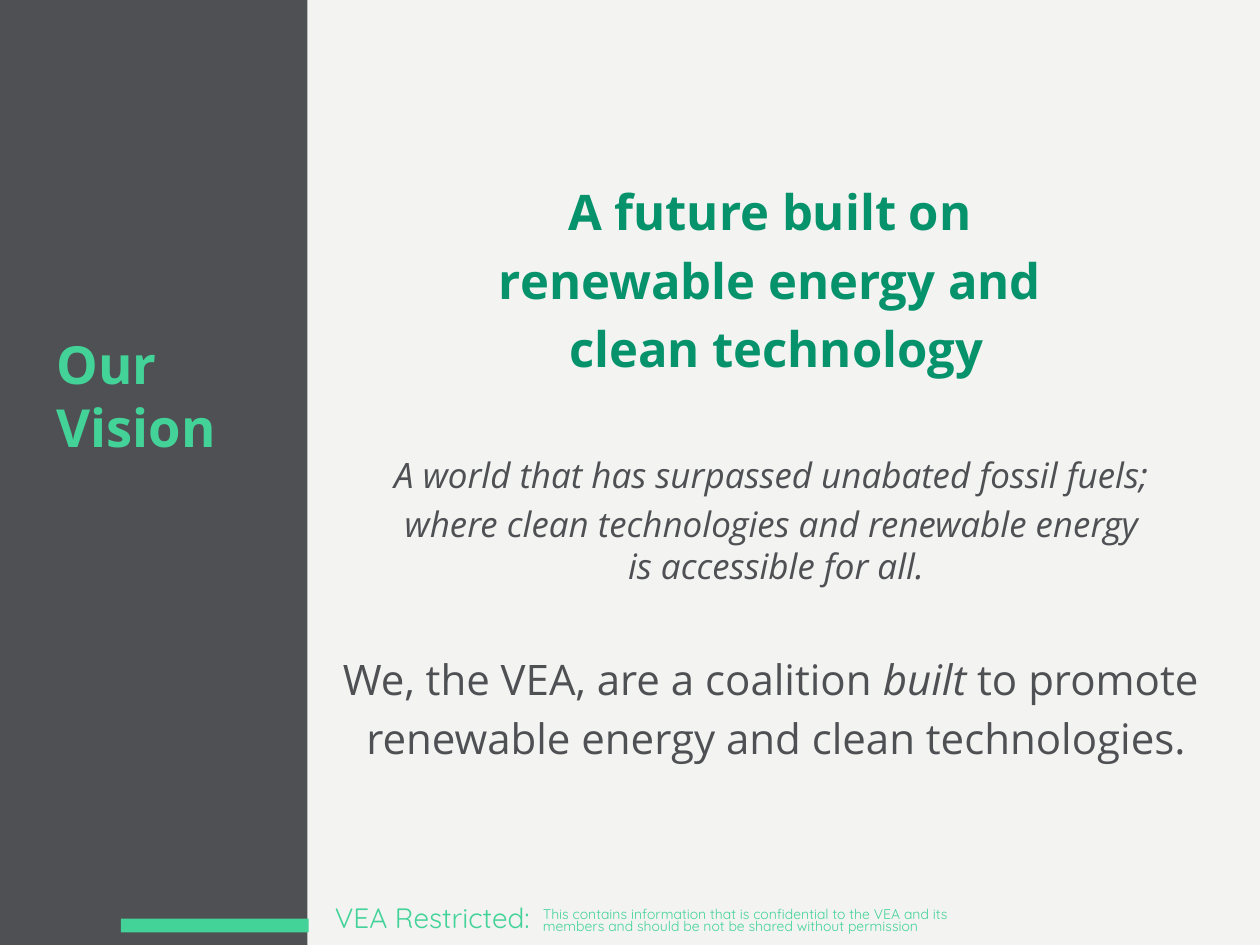
from dataclasses import dataclass

from pptx import Presentation
from pptx.dml.color import RGBColor
from pptx.enum.shapes import MSO_SHAPE
from pptx.enum.text import MSO_ANCHOR, MSO_AUTO_SIZE, PP_ALIGN
from pptx.util import Inches, Pt

COLORS = {"paper": "F3F3F2", "slate": "4E5053", "mint": "43D398", "green": "06926B"}
BODY_FONT, FOOTER_FONT = "Open Sans", "Quicksand"


@dataclass(frozen=True)
class Box:
    left: float
    top: float
    width: float
    height: float

    def lengths(self) -> tuple:
        return tuple(Inches(v) for v in (self.left, self.top, self.width, self.height))


@dataclass(frozen=True)
class Run:
    text: str
    italic: bool = False


@dataclass(frozen=True)
class Style:
    size: float
    color: str
    font: str = BODY_FONT
    bold: bool = False


@dataclass(frozen=True)
class Line:
    runs: tuple[Run, ...]
    style: Style
    before: float = 0
    spacing: float | Pt = 1.0
    align: PP_ALIGN = PP_ALIGN.LEFT


def rgb(name: str) -> RGBColor:
    return RGBColor.from_string(COLORS[name])


def place(shape, box: Box) -> None:
    shape.left, shape.top, shape.width, shape.height = box.lengths()


def add_bar(slide, box: Box, color: str) -> None:
    bar = slide.shapes.add_shape(MSO_SHAPE.RECTANGLE, *box.lengths())
    bar.shadow.inherit = False
    bar.fill.solid()
    bar.fill.fore_color.rgb = rgb(color)
    bar.line.fill.background()


def add_run(paragraph, text: str, style: Style, italic: bool) -> None:
    run = paragraph.add_run()
    run.text = text
    font = run.font
    font.name, font.size = style.font, Pt(style.size)
    font.bold, font.italic = style.bold, italic
    font.color.rgb = rgb(style.color)


def write(shape, lines: list[Line], anchor: MSO_ANCHOR = MSO_ANCHOR.TOP) -> None:
    frame = shape.text_frame
    frame.word_wrap = True
    frame.auto_size = MSO_AUTO_SIZE.NONE
    frame.vertical_anchor = anchor
    for index, line in enumerate(lines):
        paragraph = frame.add_paragraph() if index else frame.paragraphs[0]
        paragraph.alignment = line.align
        paragraph.space_before = Pt(line.before)
        paragraph.line_spacing = line.spacing
        for run in line.runs:
            for part, text in enumerate(run.text.split("\n")):
                if part:
                    paragraph.add_line_break()
                add_run(paragraph, text, line.style, run.italic)


def vision_lines() -> list[Line]:
    headline = Style(28, "green", bold=True)
    outlook = Style(20, "slate")
    mission = Style(24, "slate")
    content = [
        (headline, 0, (Run("A future built on "),)),
        (headline, 5.6, (Run("renewable energy and "),)),
        (headline, 5.6, (Run("clean technology"),)),
        (outlook, 43.2, (Run("A world that has surpassed unabated fossil fuels; ", True),)),
        (outlook, 4, (Run("where clean technologies and renewable energy \n"
                          "is accessible for all.", True),)),
        (mission, 38.4, (Run("We, the VEA, are a coalition "), Run("built", True),
                         Run(" to promote "))),
        (mission, 4.8, (Run("renewable energy and clean technologies."),)),
    ]
    return [Line(runs, style, before, align=PP_ALIGN.CENTER)
            for style, before, runs in content]


def add_footer(slide) -> None:
    label = Line((Run("VEA Restricted:"),), Style(16, "mint", FOOTER_FONT))
    notice = Line((Run("This contains information that is confidential to the VEA and its "
                       "members and should be not be shared without permission"),),
                  Style(8, "mint", FOOTER_FONT), spacing=Pt(6.6))
    for box, line in ((Box(2.56, 7.1, 1.87, 0.38), label),
                      (Box(4.21, 7.18, 3.54, 0.3), notice)):
        write(slide.shapes.add_textbox(*box.lengths()), [line])


def main() -> None:
    deck = Presentation()
    deck.slide_width, deck.slide_height = Inches(10), Inches(7.5)
    slide = deck.slides.add_slide(deck.slide_layouts[0])
    slide.background.fill.solid()
    slide.background.fill.fore_color.rgb = rgb("paper")

    add_bar(slide, Box(0, 0, 2.44, 7.5), "slate")
    add_bar(slide, Box(0.96, 7.29, 1.49, 0.11), "mint")

    title, vision = slide.shapes.title, slide.placeholders[1]
    # Placeholders come first in the shape tree, so the title is raised above the panel.
    title.element.getparent().append(title.element)
    place(title, Box(0.35, 2.49, 1.97, 1.29))
    write(title, [Line((Run("Our \nVision"),), Style(30, "mint", bold=True))],
          MSO_ANCHOR.MIDDLE)
    place(vision, Box(2.44, 1.39, 7.44, 4.8))
    write(vision, vision_lines())

    add_footer(slide)
    deck.save("out.pptx")


if __name__ == "__main__":
    main()
